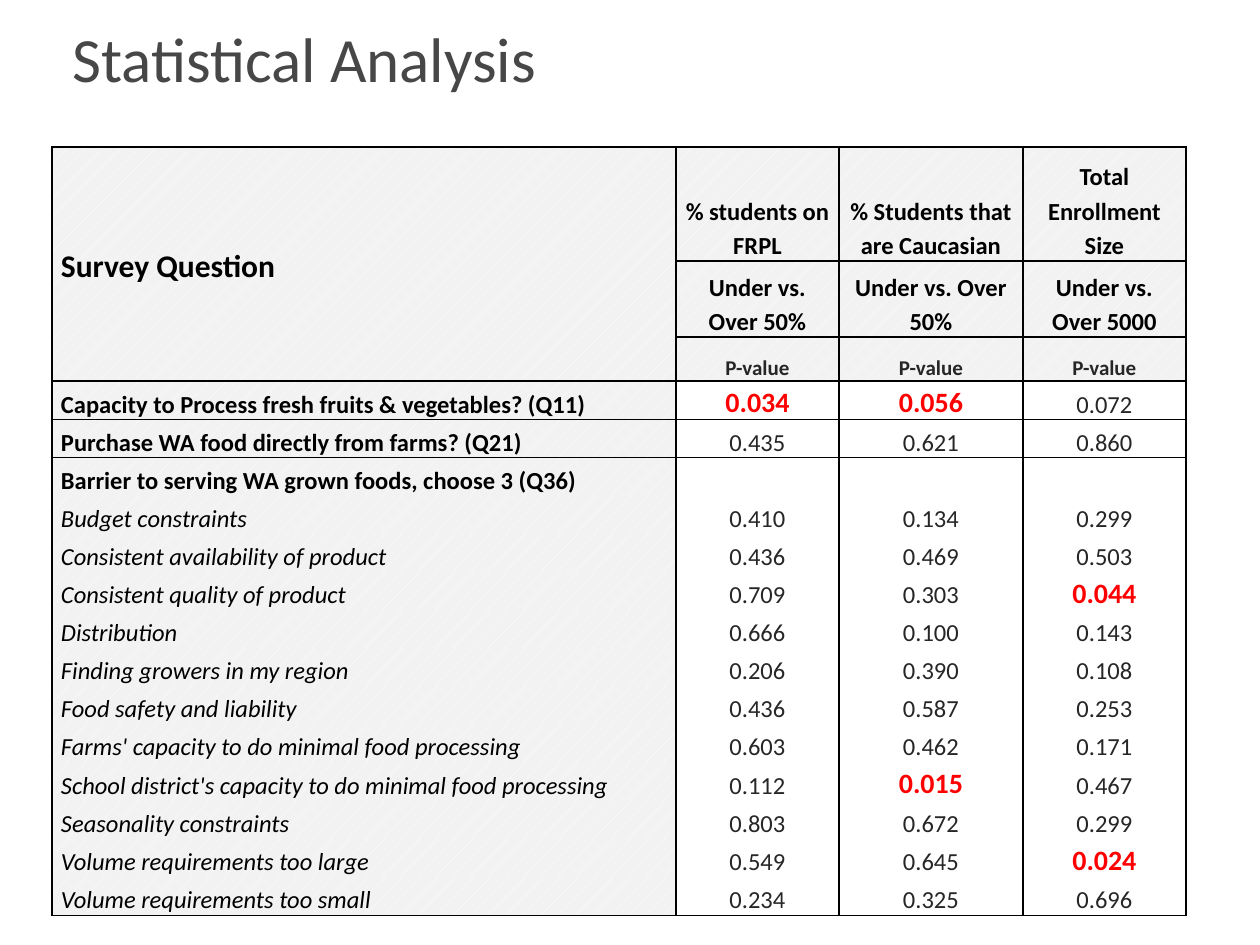
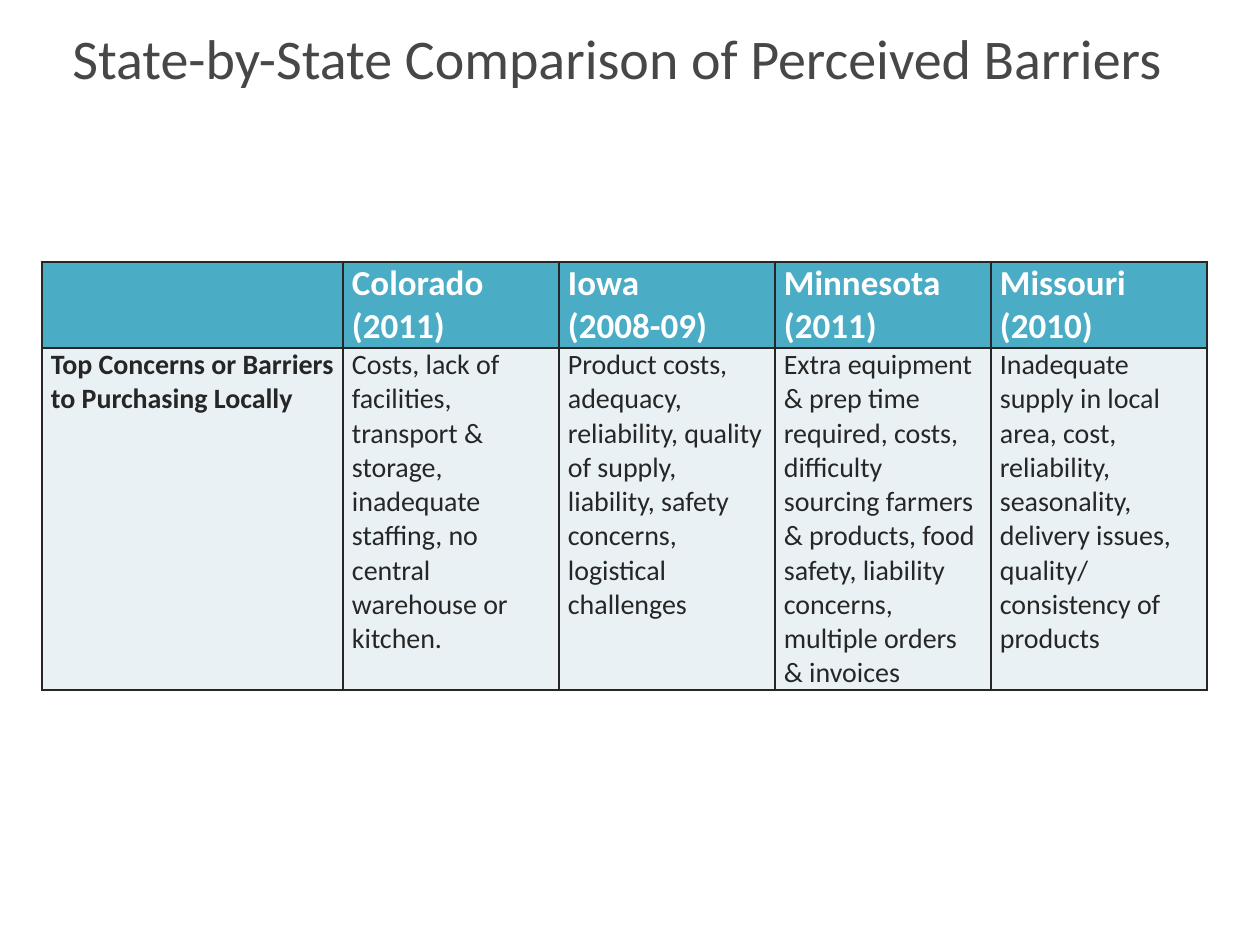
from lxml.etree import SubElement
from pptx import Presentation
from pptx.dml.color import RGBColor
from pptx.enum.dml import MSO_PATTERN
from pptx.enum.text import MSO_ANCHOR as Anchor, PP_ALIGN as Align
from pptx.oxml.ns import qn
from pptx.util import Pt

SCALE = 914400 / 126
FONT = "Calibri"
BLACK, DARK, GRAY, RED = "000000", "262626", "474747", "FF0000"
WHITE, PALE, TEAL, ICE = "FFFFFF", "F2F2F2", "4BACC6", "E9F1F5"

HEADS = [
    ["% students on FRPL", "% Students that are Caucasian", "Total Enrollment Size"],
    ["Under vs. Over 50%", "Under vs. Over 50%", "Under vs. Over 5000"],
    ["P-value"] * 3,
]
TOPICS = [
    ("Capacity to Process fresh fruits & vegetables? (Q11)", "0.034", "0.056", "0.072"),
    ("Purchase WA food directly from farms? (Q21)", "0.435", "0.621", "0.860"),
    ("Barrier to serving WA grown foods, choose 3 (Q36)", "", "", ""),
]
BARRIERS = [
    ("Budget constraints", "0.410", "0.134", "0.299"),
    ("Consistent availability of product", "0.436", "0.469", "0.503"),
    ("Consistent quality of product", "0.709", "0.303", "0.044"),
    ("Distribution", "0.666", "0.100", "0.143"),
    ("Finding growers in my region", "0.206", "0.390", "0.108"),
    ("Food safety and liability", "0.436", "0.587", "0.253"),
    ("Farms' capacity to do minimal food processing", "0.603", "0.462", "0.171"),
    ("School district's capacity to do minimal food processing",
     "0.112", "0.015", "0.467"),
    ("Seasonality constraints", "0.803", "0.672", "0.299"),
    ("Volume requirements too large", "0.549", "0.645", "0.024"),
    ("Volume requirements too small", "0.234", "0.325", "0.696"),
]
NOTABLE = {"0.034", "0.056", "0.044", "0.015", "0.024"}
STATES = [
    ("", "Top Concerns or Barriers to Purchasing Locally"),
    ("Colorado (2011)",
     "Costs, lack of facilities, transport & storage, inadequate staffing, "
     "no central warehouse or kitchen."),
    ("Iowa\n(2008-09)",
     "Product costs, adequacy, reliability, quality of supply, liability, "
     "safety concerns, logistical challenges"),
    ("Minnesota (2011)",
     "Extra equipment & prep time required, costs, difficulty sourcing farmers "
     "& products, food safety, liability concerns, multiple orders & invoices"),
    ("Missouri (2010)",
     "Inadequate supply in local area, cost, reliability, seasonality, "
     "delivery issues, quality/ consistency of products"),
]


def px(n):
    return round(n * SCALE)


def rgb(code):
    return RGBColor.from_string(code)


def write(frame, text, size=14, color=BLACK, bold=False, italic=False,
          align=Align.LEFT, space=None):
    frame.word_wrap = True
    frame.text = text
    for para in frame.paragraphs:
        para.alignment = align
        para.line_spacing = space
        for run in para.runs:
            font = run.font
            font.name, font.size = FONT, Pt(size)
            font.bold, font.italic = bold, italic
            font.color.rgb = rgb(color)


def add_title(slide, text, size):
    box = slide.shapes.add_textbox(px(60), px(10), px(1158), px(95))
    box.text_frame.vertical_anchor = Anchor.MIDDLE
    write(box.text_frame, text, size=size, color=GRAY)


def add_grid(slide, left, top, cols, rows):
    """Add a table without banding, sized by its columns and rows."""
    frame = slide.shapes.add_table(len(rows), len(cols), px(left), px(top),
                                   px(sum(cols)), px(sum(rows)))
    grid = frame.table
    grid.first_row = grid.horz_banding = False
    for col, width in zip(grid.columns, cols):
        col.width = px(width)
    for row, height in zip(grid.rows, rows):
        row.height = px(height)
    return grid


def edge(cell, color, sides="LRTB"):
    """Rule the given sides and clear the others."""
    props = cell._tc.get_or_add_tcPr()
    for spot, side in enumerate("LRTB"):
        line = SubElement(props, qn(f"a:ln{side}"), w=str(Pt(1)))
        if side in sides:
            fill = SubElement(line, qn("a:solidFill"))
            SubElement(fill, qn("a:srgbClr"), val=color)
        else:
            SubElement(line, qn("a:noFill"))
        props.insert(spot, line)


def paint(cell, color):
    if color:
        cell.fill.solid()
        cell.fill.fore_color.rgb = rgb(color)
    else:
        cell.fill.background()


def shade(cell):
    cell.fill.patterned()
    cell.fill.pattern = MSO_PATTERN.PERCENT_5
    cell.fill.fore_color.rgb = rgb(WHITE)
    cell.fill.back_color.rgb = rgb(PALE)


def pad(cell, anchor):
    cell.margin_left = cell.margin_right = px(9)
    cell.margin_top = cell.margin_bottom = 0
    cell.vertical_anchor = anchor


def draw_stats(slide):
    add_title(slide, "Statistical Analysis", 36)
    body = TOPICS + BARRIERS
    first, last = len(HEADS), len(HEADS) + len(body) - 1
    block = first + len(TOPICS) - 1
    grid = add_grid(slide, 52, 147, [624, 163, 184, 163],
                    [114, 76, 44] + [38] * len(body))

    rows = [["", *names] for names in HEADS] + body
    rows[0][0] = "Survey Question"
    for r, row in enumerate(rows):
        sides = "LR" + "T" * (r <= block) + "B" * (r < block or r == last)
        for c, text in enumerate(row):
            cell = grid.cell(r, c)
            pad(cell, Anchor.BOTTOM)
            if r < first or c == 0:
                shade(cell)
            else:
                paint(cell, None)
            edge(cell, BLACK, sides)
            look = {"align": Align.CENTER if c else Align.LEFT}
            if r < first:
                look["bold"] = True
                if text == "P-value":
                    look.update(size=12, color=DARK)
                elif c == 0:
                    look["size"] = 18
            elif c == 0:
                look.update(bold=r <= block, italic=r > block)
            elif text in NOTABLE:
                look.update(size=16, color=RED, bold=True)
            else:
                look["color"] = DARK
            write(cell.text_frame, text, space=1.15, **look)
    grid.cell(0, 0).merge(grid.cell(first - 1, 0))
    grid.cell(0, 0).vertical_anchor = Anchor.MIDDLE


def draw_states(slide):
    add_title(slide, "State-by-State Comparison of Perceived Barriers", 32)
    grid = add_grid(slide, 42, 262, [301] + [216] * 4, [86, 342])
    for c, (name, text) in enumerate(STATES):
        head, body = grid.cell(0, c), grid.cell(1, c)
        for cell, color in ((head, TEAL), (body, ICE)):
            pad(cell, Anchor.TOP)
            paint(cell, color)
            edge(cell, DARK)
        write(head.text_frame, name, size=20, color=WHITE, bold=True)
        write(body.text_frame, text, size=16, color=DARK, bold=c == 0)


def main():
    deck = Presentation()
    deck.slide_width, deck.slide_height = px(1260), px(945)
    for draw in (draw_stats, draw_states):
        draw(deck.slides.add_slide(deck.slide_layouts[6]))
    deck.save("out.pptx")


if __name__ == "__main__":
    main()
